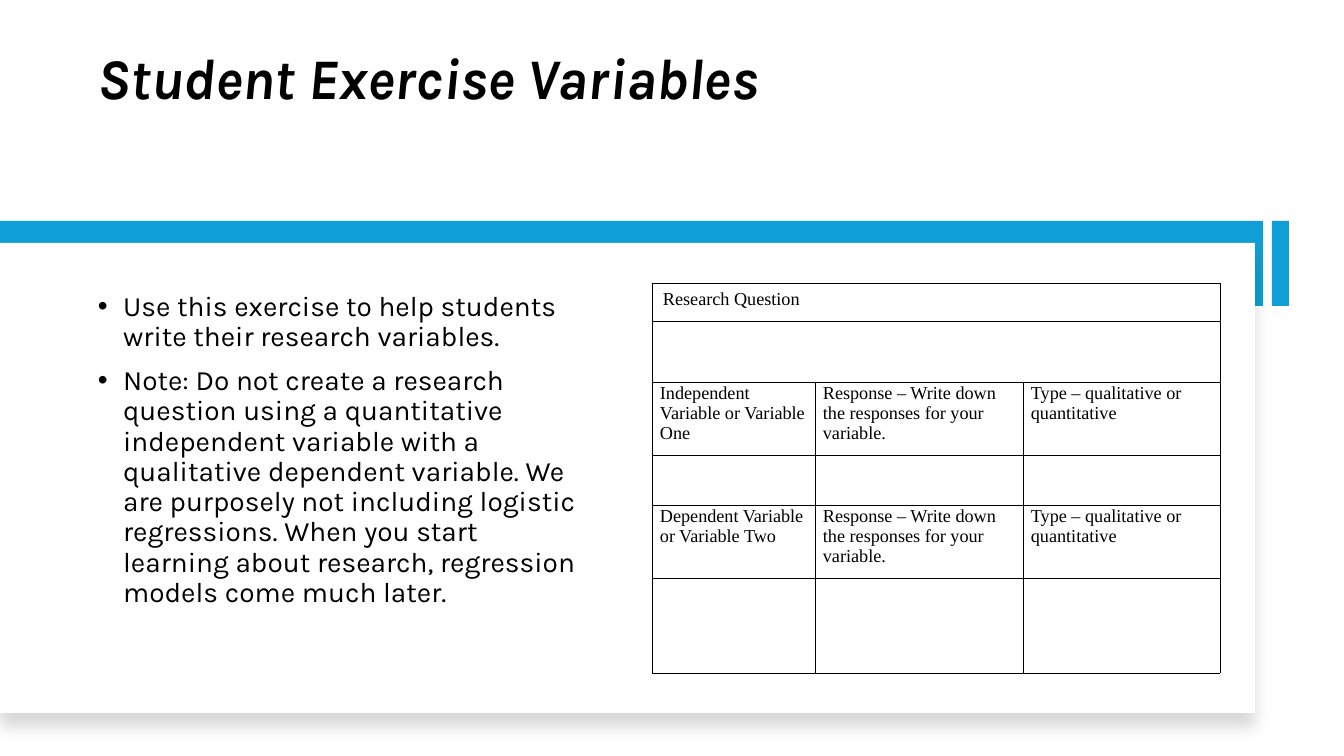
"""Build the slide on student exercise variables."""
from lxml import etree
from pptx import Presentation
from pptx import util as u
from pptx.dml import color
from pptx.enum import shapes, text
from pptx.oxml import ns, parse_xml

PX = 914400 / 100.8
BLUE, BLACK, WHITE = "0F9ED5", "000000", "FFFFFF"


def px(*lengths):
    return [u.Emu(round(length * PX)) for length in lengths]


def rgb(value):
    return color.RGBColor.from_string(value)


deck = Presentation()
deck.slide_width, deck.slide_height = px(1344, 756)
page = deck.slides.add_slide(deck.slide_layouts[6])

for place, fill, raised in [
    ((0, 221, 1263, 85), BLUE, False),
    ((0, 243, 1255, 470), WHITE, True),
    ((1272, 221, 17, 85), BLUE, False),
]:
    bar = page.shapes.add_shape(shapes.MSO_SHAPE.RECTANGLE, *px(*place))
    bar.shadow.inherit = False
    bar.fill.solid()
    bar.fill.fore_color.rgb = rgb(fill)
    bar.line.fill.background()
    if raised:
        effects = bar._element.spPr.find(ns.qn("a:effectLst"))
        effects.append(parse_xml(
            f'<a:outerShdw {ns.nsdecls("a")} blurRad="139700" dist="127000" '
            'dir="5400000" algn="t" rotWithShape="0"><a:srgbClr val="000000">'
            '<a:alpha val="15000"/></a:srgbClr></a:outerShdw>'))

title_lines = ["Student Exercise Variables"]
advice = [
    "Use this exercise to help students write their research variables.",
    "Note: Do not create a research question using a quantitative independent "
    "variable with a qualitative dependent variable. We are purposely not including "
    "logistic regressions. When you start learning about research, regression models "
    "come much later.",
]
for place, lines, size, is_title in [
    ((88, 45, 1110, 136), title_lines, 41, True),
    ((88, 287, 500, 400), advice, 20, False),
]:
    box = page.shapes.add_textbox(*px(*place))
    frame = box.text_frame
    frame.word_wrap = True
    frame.vertical_anchor = text.MSO_ANCHOR.TOP
    for index, line in enumerate(lines):
        para = frame.add_paragraph() if index else frame.paragraphs[0]
        para.line_spacing = 0.9
        if not is_title:
            para.space_before = u.Pt(10)
            props = para._p.get_or_add_pPr()
            props.set("marL", "228600")
            props.set("indent", "-228600")
            etree.SubElement(props, ns.qn("a:buFont")).set("typeface", "Arial")
            etree.SubElement(props, ns.qn("a:buChar")).set("char", "•")
        span = para.add_run()
        span.text = line
        span.font.name = "Karla"
        span.font.size = u.Pt(size)
        span.font.bold = span.font.italic = is_title
        span.font.color.rgb = rgb(BLACK)

widths = [163, 208, 197]
heights = [38, 61, 73, 50, 73, 95]
prompts = [
    "Response – Write down the responses for your variable.",
    "Type – qualitative or quantitative",
]
wording = {
    0: ["Research Question"],
    2: ["Independent Variable or Variable One", *prompts],
    4: ["Dependent Variable or Variable Two", *prompts],
}
holder = page.shapes.add_table(
    len(heights), len(widths), *px(652, 283, sum(widths), sum(heights)))
table = holder.table
table.first_row = table.horz_banding = False
for column, width in zip(table.columns, px(*widths)):
    column.width = width
for row, height in zip(table.rows, px(*heights)):
    row.height = height

for row in range(len(heights)):
    side, top, bottom = (11, 6, 6) if row == 0 else (8, 1, 0)
    for column in range(len(widths)):
        cell = table.cell(row, column)
        cell.margin_left, cell.margin_right = px(side, side)
        cell.margin_top, cell.margin_bottom = px(top, bottom)
        props = cell._tc.get_or_add_tcPr()
        for edge in ("lnL", "lnR", "lnT", "lnB"):
            props.append(parse_xml(
                f'<a:{edge} {ns.nsdecls("a")} w="6350"><a:solidFill>'
                f'<a:srgbClr val="{BLACK}"/></a:solidFill></a:{edge}>'))
        cell.fill.background()
    for column, entry in enumerate(wording.get(row, [])):
        span = table.cell(row, column).text_frame.paragraphs[0].add_run()
        span.text = entry
        span.font.name = "Times New Roman"
        span.font.size = u.Pt(13)
        span.font.color.rgb = rgb(BLACK)

for row in (0, 1):
    table.cell(row, 0).merge(table.cell(row, len(widths) - 1))

deck.save("out.pptx")
